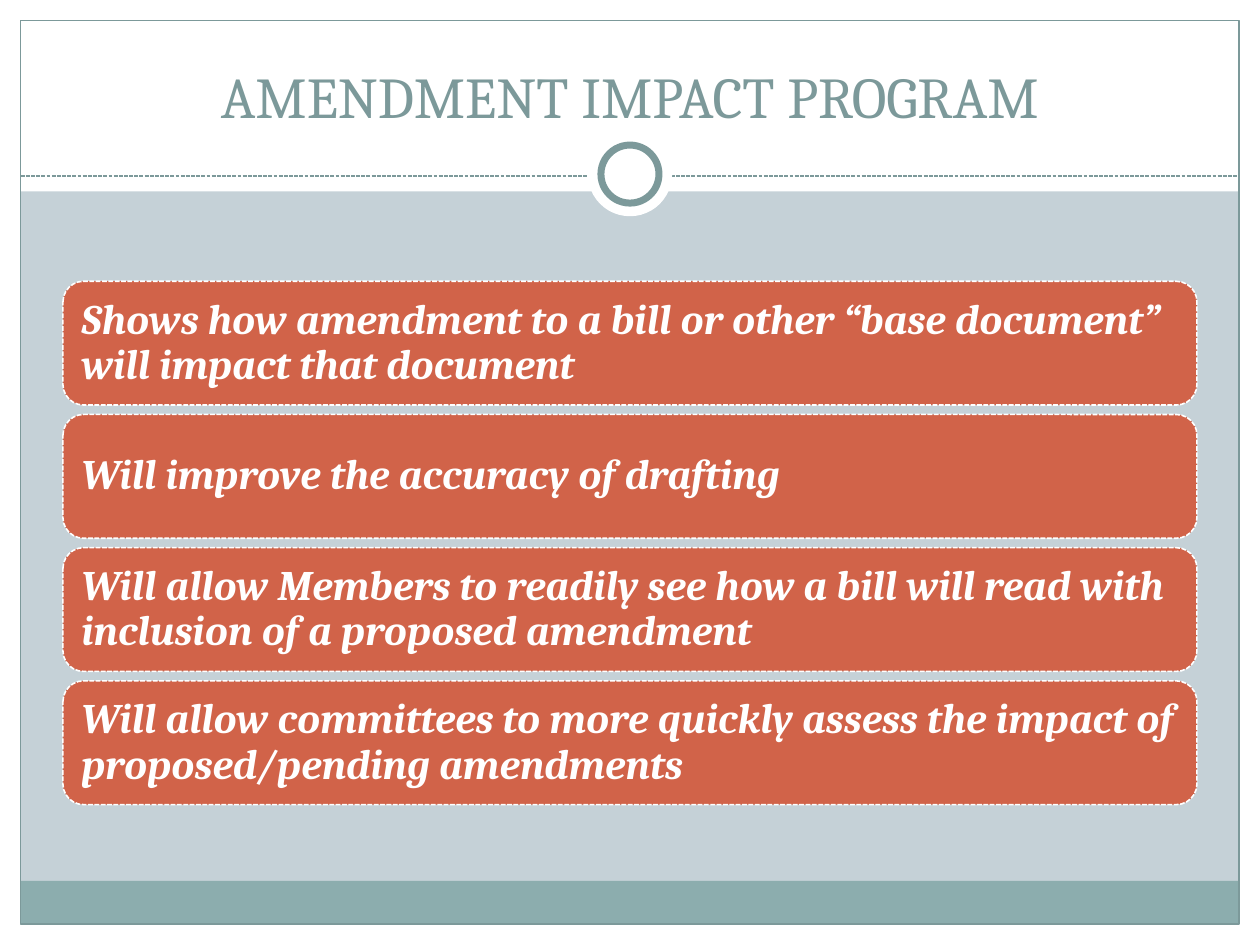
import pptx
import pptx.util
import pptx.dml.color
import pptx.enum.dml
import pptx.enum.shapes
import pptx.enum.text
from dataclasses import dataclass
from lxml import etree

Cm = pptx.util.Cm
Pt = pptx.util.Pt
KIND = pptx.enum.shapes.MSO_SHAPE
ALIGN = pptx.enum.text.PP_ALIGN
ANCHOR = pptx.enum.text.MSO_ANCHOR
DASH = pptx.enum.dml.MSO_LINE.SQUARE_DOT
NS = "http://schemas.openxmlformats.org/drawingml/2006/main"


@dataclass(frozen=True)
class Theme:
    back: str = "C5D1D7"
    white: str = "FFFFFF"
    slate: str = "7C999A"
    teal: str = "8CADAE"
    brick: str = "D16349"
    font: str = "Cambria"
    title: int = 33
    body: int = 24


THEME = Theme()
WIDE, HIGH = 25.4, 19.05
EDGE = 0.42
HEAD = 3.86
POINTS = [
    "Shows how amendment to a bill or other “base document” will impact that document",
    "Will improve the accuracy of drafting",
    "Will allow Members to readily see how a bill will read with inclusion of a proposed amendment",
    "Will allow committees to more quickly assess the impact of proposed/pending amendments",
]


def rgb(code):
    return pptx.dml.color.RGBColor.from_string(code)


def style(item, values):
    for name, value in values.items():
        setattr(item, name, value)


def stroke(line, color, width, dash=None):
    line.color.rgb = rgb(color)
    style(line, {"width": Pt(width), "dash_style": dash})


def shape(slide, kind, box, fill=None, line=None):
    item = slide.shapes.add_shape(kind, *map(Cm, box))
    item.shadow.inherit = False
    if fill:
        item.fill.solid()
        item.fill.fore_color.rgb = rgb(fill)
    else:
        item.fill.background()
    if line:
        stroke(item.line, *line)
    else:
        item.line.fill.background()
    return item


def write(item, text, frame, para, font, color):
    body = item.text_frame
    style(body, {"word_wrap": True, **frame})
    first = body.paragraphs[0]
    style(first, para)
    run = first.add_run()
    run.text = text
    style(run.font, {"name": THEME.font, **font})
    run.font.color.rgb = rgb(color)


def backdrop(slide, box):
    """White margins and header, footer band and thin frame."""
    left, top, width, height = box
    right, base = left + width, top + height
    for side in [
        (left, base - EDGE, width, EDGE),
        (left, top, width, HEAD),
        (left, top, EDGE, height),
        (right - EDGE, top, EDGE, height),
    ]:
        shape(slide, KIND.RECTANGLE, side, THEME.white)
    inner = width - 2 * EDGE
    foot = 0.87
    shape(slide, KIND.RECTANGLE,
          (left + EDGE, base - EDGE - foot, inner, foot), THEME.teal)
    shape(slide, KIND.RECTANGLE,
          (left + EDGE, top + EDGE, inner, height - 2 * EDGE),
          line=(THEME.slate, 0.75))


def divider(slide, box):
    """Dashed rule with a ring at its centre."""
    left, top, width, height = box
    rule = top + height / 2 + 0.04
    line = slide.shapes.add_connector(
        pptx.enum.shapes.MSO_CONNECTOR.STRAIGHT,
        Cm(left), Cm(rule), Cm(left + width), Cm(rule))
    stroke(line.line, THEME.slate, 0.75, DASH)
    etree.SubElement(line._element.spPr, f"{{{NS}}}effectLst")
    mid = left + width / 2
    for size, edge in [(height, None), (1.17, (THEME.slate, 4))]:
        spot = (mid - size / 2, top + (height - size) / 2, size, size)
        shape(slide, KIND.OVAL, spot, THEME.white, edge)


def heading(slide, box, text):
    item = slide.shapes.add_textbox(*map(Cm, box))
    write(item, text, {"vertical_anchor": ANCHOR.BOTTOM},
          {"alignment": ALIGN.CENTER}, {"size": Pt(THEME.title)}, THEME.slate)


def bars(slide, box, texts):
    """Equal rounded bars, one for each text, stacked to fill the box."""
    left, top, width, height = box
    gap = 0.19
    tall = (height - gap * (len(texts) - 1)) / len(texts)
    sides = ("left", "top", "right", "bottom")
    frame = {f"margin_{side}": Cm(0.25) for side in sides}
    frame["vertical_anchor"] = ANCHOR.MIDDLE
    for step, text in enumerate(texts):
        spot = (left, top + step * (tall + gap), width, tall)
        item = shape(slide, KIND.ROUNDED_RECTANGLE, spot, THEME.brick,
                     (THEME.white, 0.9, DASH))
        write(item, text, frame,
              {"alignment": ALIGN.LEFT, "line_spacing": 0.9},
              {"size": Pt(THEME.body), "bold": True, "italic": True},
              THEME.white)


def main():
    deck = pptx.Presentation()
    style(deck, {"slide_width": Cm(WIDE), "slide_height": Cm(HIGH)})
    slide = deck.slides.add_slide(deck.slide_layouts[6])
    slide.background.fill.solid()
    slide.background.fill.fore_color.rgb = rgb(THEME.back)
    backdrop(slide, (0, 0, WIDE, HIGH))
    divider(slide, (EDGE, 2.66, WIDE - 2 * EDGE, 1.7))
    heading(slide, (0.85, 0.64, 23.7, 2.11), "AMENDMENT IMPACT PROGRAM")
    bars(slide, (1.27, 5.67, 22.86, 10.55), POINTS)
    deck.save("out.pptx")


if __name__ == "__main__":
    main()
